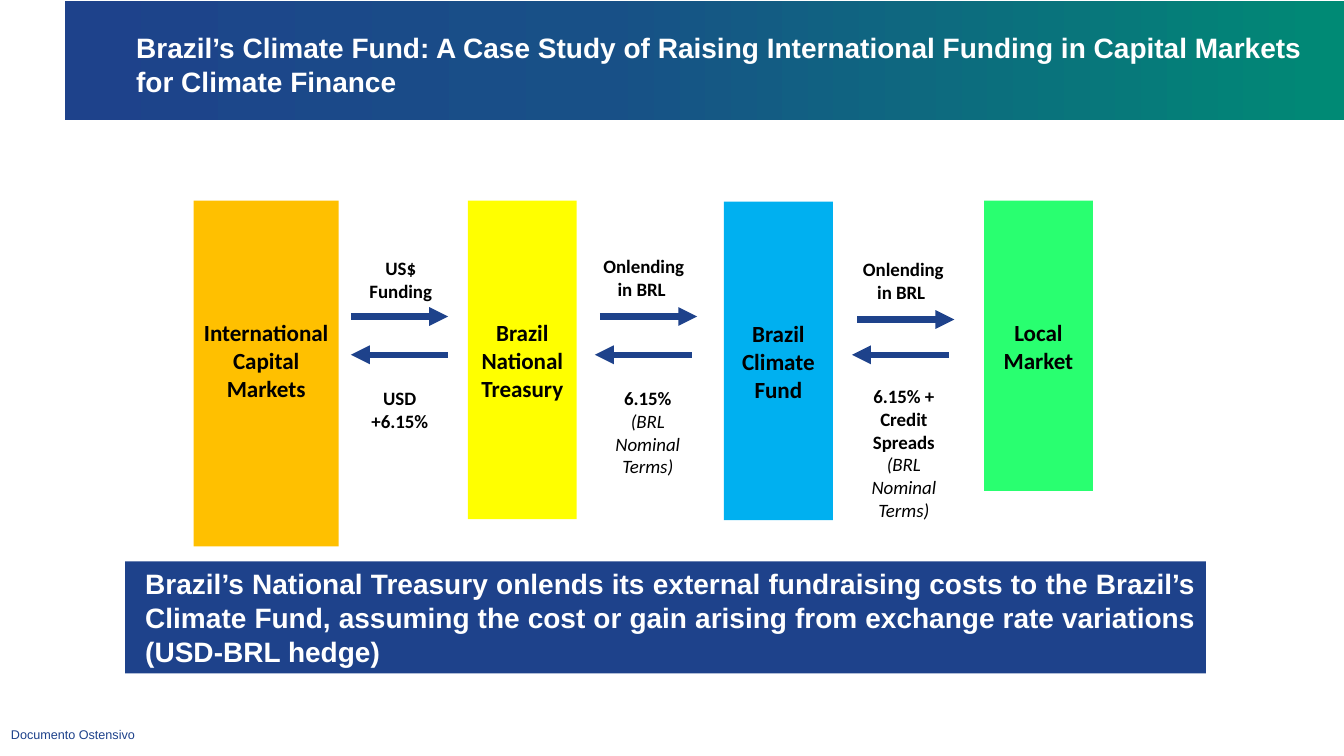
from copy import deepcopy

from pptx import Presentation
from pptx.dml.color import RGBColor
from pptx.enum.shapes import MSO_CONNECTOR, MSO_SHAPE
from pptx.enum.text import MSO_ANCHOR, MSO_AUTO_SIZE, PP_ALIGN
from pptx.oxml.ns import qn
from pptx.util import Inches, Pt
from lxml.etree import SubElement

# Grid of 0.1 inch cells, in columns and rows
CELL = Inches(0.1)
NAVY, WHITE, BLACK = "1E428B", "FFFFFF", "000000"


def color(value):
    return RGBColor.from_string(value)


def write(shape, text, size=13.5, font="Calibri", ink=BLACK, bold=True, italic=False,
          align=PP_ALIGN.CENTER, anchor=MSO_ANCHOR.TOP, insets=(1, 0.5, 1, 0.5)):
    """Add a run to the shape's first paragraph; insets are left, top, right, bottom."""
    frame = shape.text_frame
    frame.word_wrap = True
    frame.auto_size = MSO_AUTO_SIZE.NONE
    frame.vertical_anchor = anchor
    frame.margin_left, frame.margin_top, frame.margin_right, frame.margin_bottom = (
        int(inset * CELL) for inset in insets)
    paragraph = frame.paragraphs[0]
    paragraph.alignment = align
    run = paragraph.add_run()
    run.text = text
    run.font.size, run.font.name = Pt(size), font
    run.font.bold, run.font.italic = bold, italic
    run.font.color.rgb = color(ink)


presentation = Presentation()
presentation.slide_width, presentation.slide_height = Inches(13.33), Inches(7.5)
slide = presentation.slides.add_slide(presentation.slide_layouts[5])
shapes = slide.shapes

# Filled rectangles: header band, conclusion and the four parties
rectangles = {}
for name, left, top, width, height, fill in [
    ("header", 6.4, 0.1, 127.1, 11.8, NAVY),
    ("conclusion", 12.4, 55.7, 107.2, 11.1, NAVY),
    ("International Capital Markets", 19.2, 19.9, 14.4, 34.3, "FFC000"),
    ("Brazil National Treasury", 46.4, 19.9, 10.8, 31.6, "FFFF00"),
    ("Brazil Climate Fund", 71.8, 20, 10.8, 31.6, "00B0F0"),
    ("Local Market", 97.6, 19.9, 10.8, 28.8, "29FF70"),
]:
    rectangle = shapes.add_shape(MSO_SHAPE.RECTANGLE, *(
        int(cells * CELL) for cells in (left, top, width, height)))
    rectangle.shadow.inherit = False
    rectangle.fill.solid()
    rectangle.fill.fore_color.rgb = color(fill)
    rectangle.line.fill.background()
    rectangles[name] = rectangle
    if name not in ("header", "conclusion"):
        write(rectangle, name, size=16.5, insets=(0.8, 11.7, 0.8, 0.5))

write(rectangles["conclusion"],
      "Brazil’s National Treasury onlends its external fundraising costs to the Brazil’s "
      "Climate Fund, assuming the cost or gain arising from exchange rate variations "
      "(USD-BRL hedge)",
      size=20, font="Arial", ink=WHITE, align=PP_ALIGN.JUSTIFY,
      anchor=MSO_ANCHOR.MIDDLE, insets=(2, 0.5, 1, 0.5))

# Header gradient with three stops
header_fill = rectangles["header"].fill
header_fill.gradient()
header_fill.gradient_angle = 0
stop_list = rectangles["header"].element.find(".//" + qn("a:gsLst"))
stop_list.insert(1, deepcopy(stop_list[0]))
for stop, (position, value) in zip(
        header_fill.gradient_stops, [(0, NAVY), (0.42, "185087"), (1, "008A75")]):
    stop.position = position
    stop.color.rgb = color(value)

# Funding flows to the right, repayments to the left
ARROW_LENGTH = 9.65
for left, row, arrow_end in [
    (34.8, 31.4, "a:tailEnd"), (59.5, 31.4, "a:tailEnd"), (85, 31.7, "a:tailEnd"),
    (34.8, 35.2, "a:headEnd"), (59, 35.2, "a:headEnd"), (84.5, 35.2, "a:headEnd"),
]:
    arrow = shapes.add_connector(MSO_CONNECTOR.STRAIGHT, *(
        int(cells * CELL) for cells in (left, row, left + ARROW_LENGTH, row)))
    arrow.line.color.rgb = color(NAVY)
    arrow.line.width = Pt(4.5)
    SubElement(arrow.line._get_or_add_ln(), qn(arrow_end), type="triangle")
    SubElement(arrow.element.spPr, qn("a:effectLst"))

# Labels above and below the arrows
for left, top, width, height, text, note in [
    (34.9, 25, 9.7, 5.6, "US$ Funding", ""),
    (58, 24.8, 11.7, 5.6, "Onlending in BRL ", ""),
    (84.3, 25.1, 10.6, 5.6, "Onlending in BRL ", ""),
    (34.8, 37.9, 9.7, 5.6, "USD +6.15%", ""),
    (59.4, 37.9, 9.7, 10.1, "6.15% ", "(BRL Nominal Terms)"),
    (84.8, 37.7, 9.7, 14.6, "6.15% + Credit Spreads ", "(BRL Nominal Terms)"),
]:
    label = shapes.add_textbox(*(int(cells * CELL) for cells in (left, top, width, height)))
    write(label, text)
    if note:
        write(label, note, bold=False, italic=True)

# Title, brought in front of the header band
title = shapes.title
title.left, title.top, title.width, title.height = (
    int(cells * CELL) for cells in (12.9, 2.4, 119.5, 7.9))
write(title,
      "Brazil’s Climate Fund: A Case Study of Raising International Funding in Capital "
      "Markets for Climate Finance",
      size=20, font="Arial", ink=WHITE, align=PP_ALIGN.LEFT,
      anchor=MSO_ANCHOR.MIDDLE, insets=(0.6, 0.6, 0.6, 0.6))
shapes.element.append(title.element)

# Classification at the foot
footer = shapes.add_textbox(*(int(cells * CELL) for cells in (0.1, 68.3, 72.9, 9.2)))
write(footer, "Documento Ostensivo", size=9, font="Arial", ink=NAVY, bold=False,
      align=PP_ALIGN.LEFT, anchor=MSO_ANCHOR.MIDDLE)

presentation.save("out.pptx")
